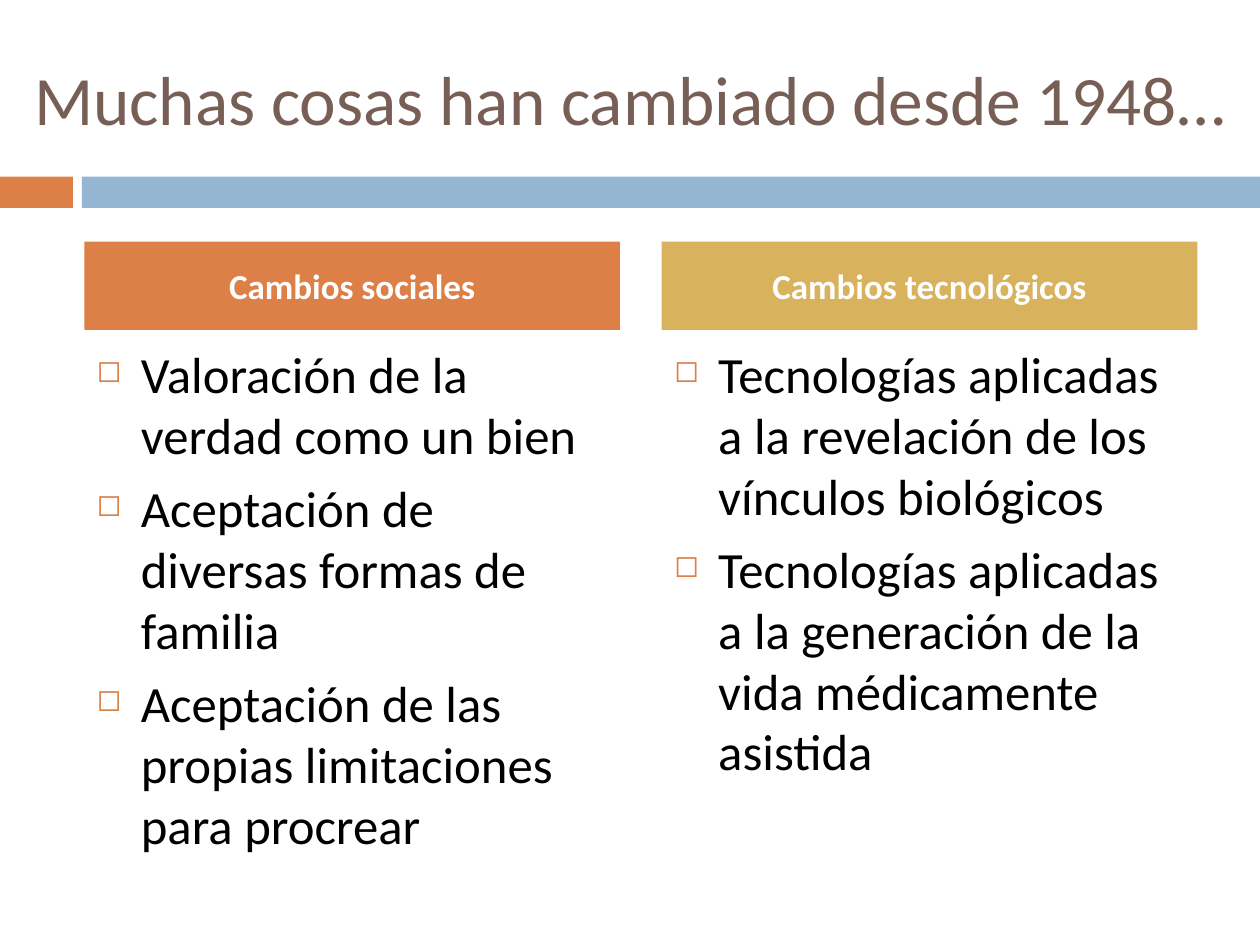
from lxml.etree import SubElement
from pptx import Presentation
from pptx.dml.color import RGBColor
from pptx.enum.shapes import MSO_SHAPE
from pptx.enum.text import MSO_ANCHOR, PP_ALIGN
from pptx.oxml.ns import qn
from pptx.util import Cm, Pt

ORANGE = RGBColor(0xDD, 0x80, 0x47)
BLUE = RGBColor(0x94, 0xB6, 0xD2)
GOLD = RGBColor(0xD8, 0xB2, 0x5C)
BROWN = RGBColor(0x77, 0x5F, 0x55)
BLACK = RGBColor(0, 0, 0)
WHITE = RGBColor(0xFF, 0xFF, 0xFF)

FONT = "Calibri"
SLIDE_W, SLIDE_H = Cm(25.4), Cm(19.05)
BAND_TOP, BAND_H = Cm(3.56), Cm(0.63)
COL_LEFT, COL_W, COL_STEP = Cm(1.7), Cm(10.8), Cm(11.64)
HEAD_TOP, HEAD_H = Cm(4.87), Cm(1.78)
LIST_TOP, LIST_H = Cm(6.78), Cm(9.96)
INDENT = Cm(0.89)

COLUMNS = [
    ("Cambios sociales", ORANGE, [
        "Valoración de la verdad como un bien",
        "Aceptación de diversas formas de familia",
        "Aceptación de las propias limitaciones para procrear",
    ]),
    ("Cambios tecnológicos", GOLD, [
        "Tecnologías aplicadas a la revelación de los vínculos biológicos",
        "Tecnologías aplicadas a la generación de la vida médicamente asistida",
    ]),
]


def style_paragraph(p, size, color, bold=False):
    """Format every run of a paragraph."""
    for r in p.runs:
        r.font.name = FONT
        r.font.size = Pt(size)
        r.font.bold = bold
        r.font.color.rgb = color


def add_bullet(p):
    """Give a paragraph a hanging indent and a small orange square."""
    pPr = p._p.get_or_add_pPr()
    pPr.set("marL", str(INDENT))
    pPr.set("indent", str(-INDENT))
    clr = SubElement(pPr, qn("a:buClr"))
    SubElement(clr, qn("a:srgbClr"), val=str(ORANGE))
    SubElement(pPr, qn("a:buSzPct"), val="60000")
    SubElement(pPr, qn("a:buChar"), char="◻")


def add_rect(s, left, top, width, height, color):
    """Add a plain filled rectangle."""
    sp = s.shapes.add_shape(MSO_SHAPE.RECTANGLE, left, top, width, height)
    sp.shadow.inherit = False
    sp.fill.solid()
    sp.fill.fore_color.rgb = color
    sp.line.fill.background()
    return sp


def add_title(s, text):
    """Add the centred slide title."""
    sp = s.shapes.add_textbox(0, Cm(0.76), SLIDE_W, Cm(2.41))
    tf = sp.text_frame
    tf.word_wrap = True
    tf.vertical_anchor = MSO_ANCHOR.MIDDLE
    tf.text = text
    p = tf.paragraphs[0]
    p.alignment = PP_ALIGN.CENTER
    style_paragraph(p, 39.6, BROWN)


def add_heading(s, left, text, color):
    """Add the coloured heading of a column."""
    tf = add_rect(s, left, HEAD_TOP, COL_W, HEAD_H, color).text_frame
    tf.vertical_anchor = MSO_ANCHOR.MIDDLE
    tf.text = text
    p = tf.paragraphs[0]
    p.alignment = PP_ALIGN.CENTER
    p.space_before = Pt(7)
    style_paragraph(p, 20, WHITE, bold=True)


def add_list(s, left, items):
    """Add the bulleted list of a column."""
    tf = s.shapes.add_textbox(left, LIST_TOP, COL_W, LIST_H).text_frame
    tf.word_wrap = True
    tf.text = "\n".join(items)
    for p in tf.paragraphs:
        p.space_before = Pt(7)
        add_bullet(p)
        style_paragraph(p, 29, BLACK)


def main():
    """Build the slide and save it."""
    prs = Presentation()
    prs.slide_width, prs.slide_height = SLIDE_W, SLIDE_H
    s = prs.slides.add_slide(prs.slide_layouts[6])
    band_left = Cm(1.65)
    add_rect(s, 0, BAND_TOP, Cm(1.47), BAND_H, ORANGE)
    add_rect(s, band_left, BAND_TOP, SLIDE_W - band_left, BAND_H, BLUE)
    add_title(s, "Muchas cosas han cambiado desde 1948…")
    for i, (heading, color, items) in enumerate(COLUMNS):
        left = COL_LEFT + i * COL_STEP
        add_list(s, left, items)
        add_heading(s, left, heading, color)
    prs.save("out.pptx")


if __name__ == "__main__":
    main()
